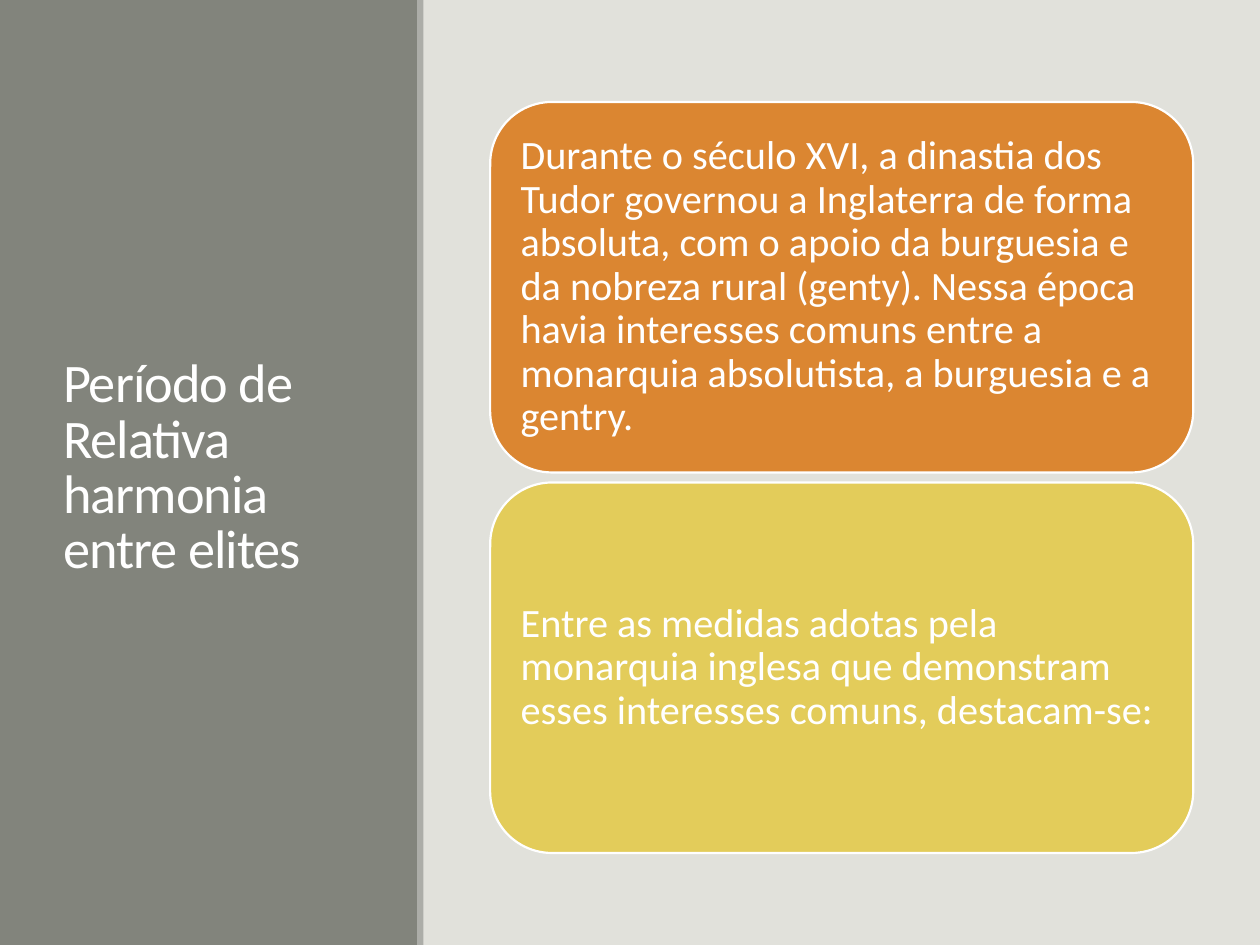
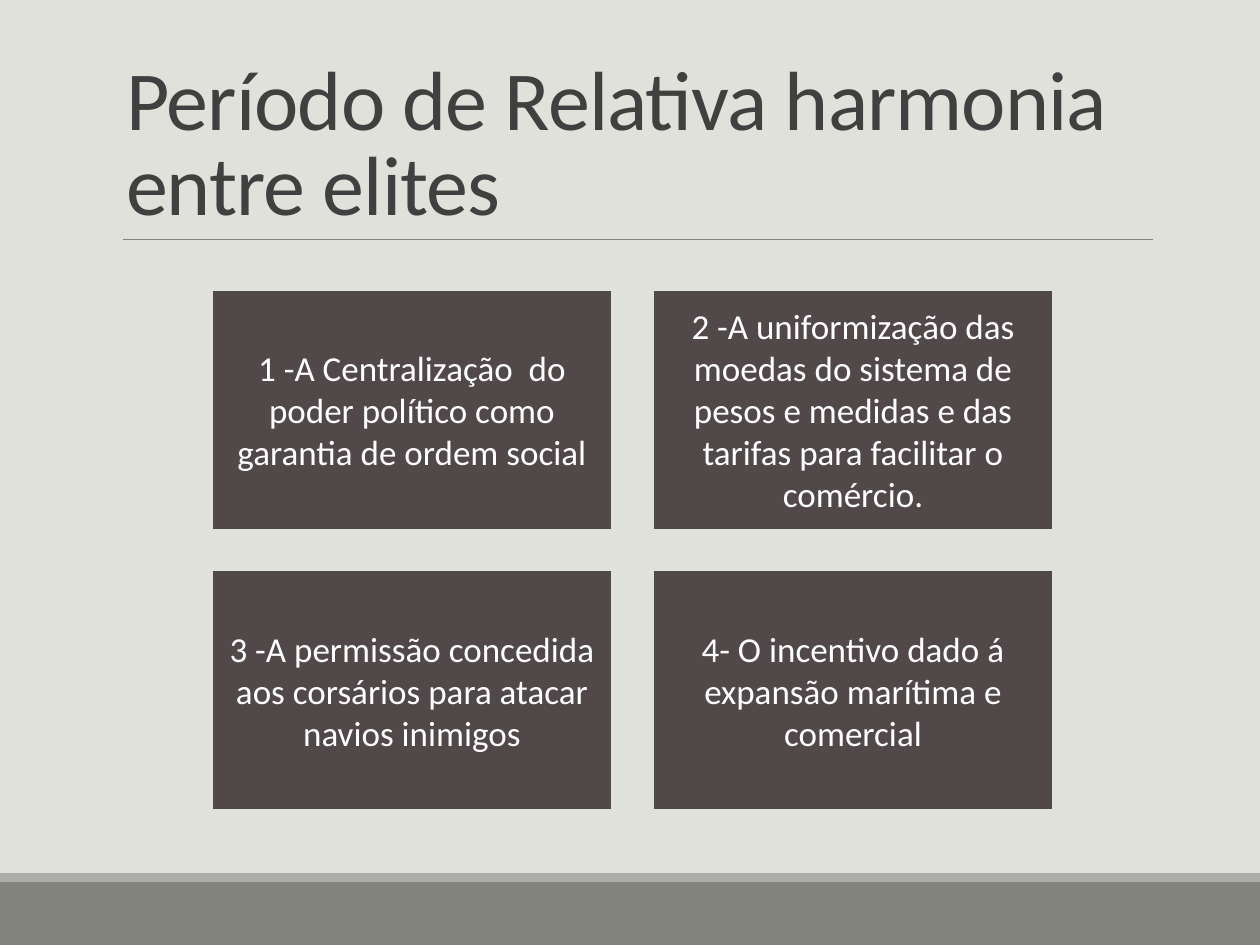
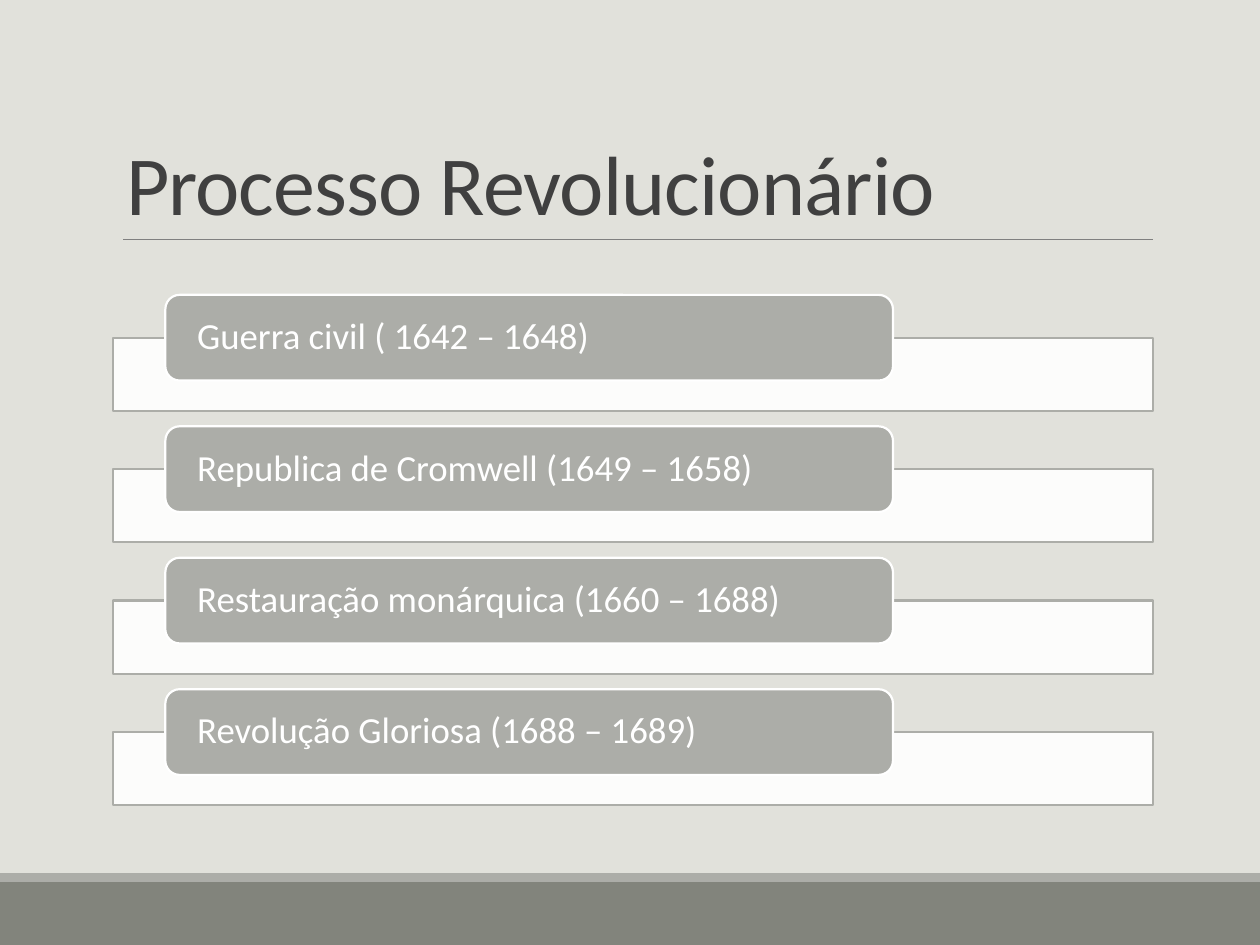
from dataclasses import dataclass
from lxml.etree import SubElement
from pptx import Presentation
from pptx.dml.color import RGBColor
from pptx.enum.shapes import MSO_CONNECTOR, MSO_SHAPE
from pptx.enum.text import MSO_ANCHOR, MSO_AUTO_SIZE, PP_ALIGN
from pptx.oxml.ns import qn
from pptx.util import Inches, Pt


@dataclass(frozen=True)
class Theme:
    font: str = "Calibri"
    back: str = "E1E1DB"
    band: str = "82847C"
    trim: str = "ACADA8"
    rule: str = "808080"
    ink: str = "404040"
    white: str = "FFFFFF"
    orange: str = "DB8631"
    yellow: str = "E3CC5A"
    brown: str = "514949"
    head: int = 48
    side: int = 31
    card: int = 23
    tile: int = 20
    step: int = 21
    edge: float = 1.25


THEME = Theme()
HARMONY = "Período de Relativa harmonia entre elites"


def write(shape, text, size, color=THEME.white, align=PP_ALIGN.LEFT,
          anchor=MSO_ANCHOR.MIDDLE, inset=(0.1, 0.05), lead=1.0, track=None):
    frame = shape.text_frame
    frame.word_wrap = True
    frame.auto_size = MSO_AUTO_SIZE.NONE
    frame.vertical_anchor = anchor
    frame.margin_left = frame.margin_right = Inches(inset[0])
    frame.margin_top = frame.margin_bottom = Inches(inset[1])
    para = frame.paragraphs[0]
    para.alignment = align
    para.line_spacing = lead
    run = para.add_run()
    run.text = text
    run.font.name = THEME.font
    run.font.size = Pt(size)
    run.font.color.rgb = RGBColor.from_string(color)
    if track is not None:
        run.font._element.set("spc", str(round(track * 100)))


def block(slide, box, fill, line=None, kind=MSO_SHAPE.RECTANGLE, alpha=None):
    shape = slide.shapes.add_shape(kind, *map(Inches, box))
    shape.shadow.inherit = False
    shape.fill.solid()
    shape.fill.fore_color.rgb = RGBColor.from_string(fill)
    if alpha is not None:
        color = shape.fill._xPr.find(".//" + qn("a:srgbClr"))
        SubElement(color, qn("a:alpha")).set("val", str(alpha * 1000))
    if line:
        shape.line.color.rgb = RGBColor.from_string(line)
        shape.line.width = Pt(THEME.edge)
    else:
        shape.line.fill.background()
    return shape


def title(slide, box, text, size, **style):
    shape = slide.shapes.title
    shape.left, shape.top, shape.width, shape.height = map(Inches, box)
    write(shape, text, size, lead=0.85, track=-0.5, **style)
    slide.shapes.element.append(shape.element)


def frame(slide, text):
    block(slide, (0, 7, 10, 0.5), THEME.band)
    block(slide, (0, 6.93, 10, 0.07), THEME.trim)
    rule = slide.shapes.add_connector(
        MSO_CONNECTOR.STRAIGHT, *map(Inches, (0.98, 1.9, 9.15, 1.9)))
    rule.line.color.rgb = RGBColor.from_string(THEME.rule)
    rule.line.width = Pt(0.5)
    SubElement(rule._element.spPr, qn("a:effectLst"))
    title(slide, (0.9, 0.31, 8.25, 1.59), text, THEME.head,
          color=THEME.ink, anchor=MSO_ANCHOR.BOTTOM)


def panel(slide, box, text):
    left, top, width, height = box
    block(slide, box, THEME.band)
    block(slide, (left + width - 0.01, top, 0.05, height), THEME.trim)
    title(slide, (left + 0.4, top + 0.57, width - 0.79, height - 1.19),
          text, THEME.side)


def cards(slide, box, items, gap=0.08):
    left, top, width, height = box
    tall = (height - gap * (len(items) - 1)) / len(items)
    for row, (text, fill) in enumerate(items):
        card = block(slide, (left, top + row * (tall + gap), width, tall),
                     fill, THEME.white, MSO_SHAPE.ROUNDED_RECTANGLE)
        write(card, text, THEME.card, inset=(0.1, 0.1), lead=0.9)


def tiles(slide, box, items, cols=2, gap=0.32):
    left, top, width, height = box
    rows = -(-len(items) // cols)
    wide = (width - gap * (cols - 1)) / cols
    tall = (height - gap * (rows - 1)) / rows
    for spot, text in enumerate(items):
        row, col = divmod(spot, cols)
        tile = block(slide, (left + col * (wide + gap), top + row * (tall + gap),
                             wide, tall), THEME.brown, THEME.back)
        write(tile, text, THEME.tile, align=PP_ALIGN.CENTER, inset=(0.08, 0.08))


def steps(slide, box, items, bar=0.58, tab=0.68, rise=0.34):
    left, top, width, height = box
    pitch = (height - rise - bar) / (len(items) - 1)
    for row, text in enumerate(items):
        y = top + row * pitch
        block(slide, (left, y + rise, width, bar), THEME.white, THEME.trim, alpha=90)
        label = block(slide, (left + width * 0.05, y, width * 0.7, tab),
                      THEME.trim, THEME.white, MSO_SHAPE.ROUNDED_RECTANGLE)
        write(label, text, THEME.step, inset=(0.22, 0), lead=0.9)


def main():
    deck = Presentation()
    deck.slide_width, deck.slide_height = Inches(10), Inches(7.5)
    fill = deck.slide_master.background.fill
    fill.solid()
    fill.fore_color.rgb = RGBColor.from_string(THEME.back)
    intro, acts, stages = (
        deck.slides.add_slide(deck.slide_layouts.get_by_name("Title Only"))
        for _ in range(3))

    panel(intro, (0, 0, 3.32, 7.5), HARMONY)
    cards(intro, (3.89, 0.81, 5.58, 5.96), [
        ("Durante o século XVI, a dinastia dos Tudor governou a Inglaterra de "
         "forma absoluta, com o apoio da burguesia e da nobreza rural (genty). "
         "Nessa época havia interesses comuns entre a monarquia absolutista, "
         "a burguesia e a gentry.", THEME.orange),
        ("Entre as medidas adotas pela monarquia inglesa que demonstram esses "
         "interesses comuns, destacam-se:", THEME.yellow),
    ])

    frame(acts, HARMONY)
    tiles(acts, (1.68, 2.3, 6.68, 4.13), [
        "1 -A Centralização  do poder político como garantia de ordem social",
        "2 -A uniformização das moedas do sistema de pesos e medidas e das "
        "tarifas para facilitar o comércio.",
        "3 -A permissão concedida aos corsários para atacar navios inimigos",
        "4- O incentivo dado á expansão marítima e comercial",
    ])

    frame(stages, "Processo Revolucionário")
    steps(stages, (0.9, 2.34, 8.25, 4.05), [
        "Guerra civil ( 1642 – 1648)",
        "Republica de Cromwell (1649 – 1658)",
        "Restauração monárquica (1660 – 1688)",
        "Revolução Gloriosa (1688 – 1689)",
    ])
    deck.save("out.pptx")


if __name__ == "__main__":
    main()
